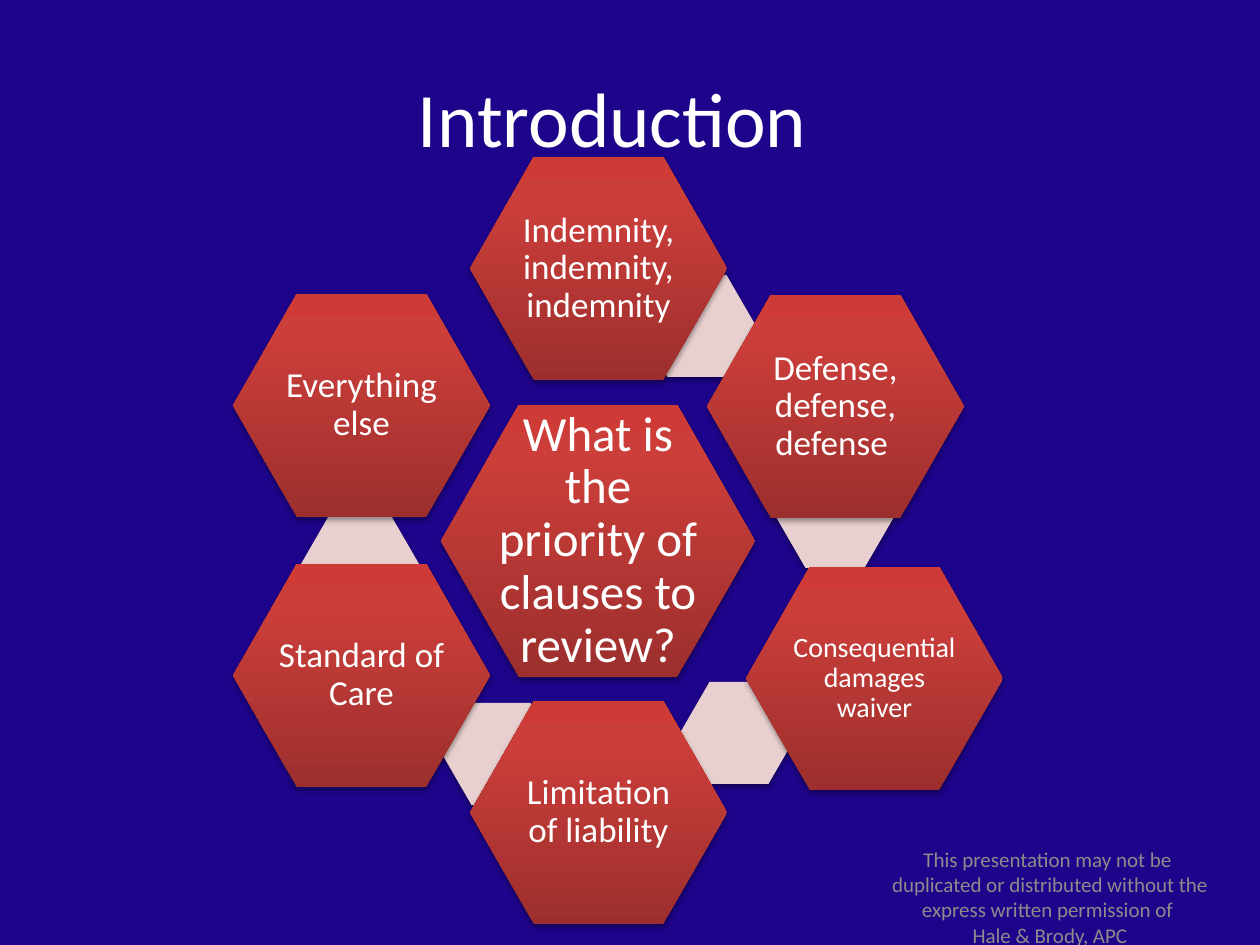
import copy

import lxml.etree
import pptx
import pptx.util
from pptx.dml.color import RGBColor
from pptx.enum.shapes import MSO_SHAPE
from pptx.enum.text import MSO_ANCHOR, PP_ALIGN
from pptx.oxml.ns import qn

# Content
TITLE = "Introduction"
NOTICE = [
    "This presentation may not be ",
    "duplicated or distributed without the express written permission of ",
    "Hale & Brody, APC",
]
CORE = ("What is the priority of clauses to review?", 441, 405)
# Clauses clockwise from the top: text, left, top, type size
RING = [
    ("Indemnity, indemnity, indemnity", 470, 157, "ring"),
    ("Defense, defense, defense ", 707, 295, "ring"),
    ("Consequential damages waiver", 746, 567, "small"),
    ("Limitation of liability", 470, 701, "ring"),
    ("Standard of Care", 233, 564, "ring"),
    ("Everything else", 233, 294, "ring"),
]
# Pale links, each drawn just behind the clause of the same index
LINKS = [(638, 275), (776, 466), (680, 682), (442, 703), (301, 513)]

# Theme
THEME = {
    "font": "Calibri",
    "back": "1E048A",
    "text": "FFFFFF",
    "mute": "8C8C8C",
    "link": "E8D0D0",
    "grad": [(0, "9C2F2D"), (0.8, "CB3E3A"), (1, "CE3B37")],
    "size": {"title": 44, "core": 28, "ring": 20, "small": 16, "note": 12},
}
CORE_SIZE, RING_SIZE, LINK_SIZE = (314, 272), (257, 223), (118, 102)
SCALE = 914400 / 126


def px(num):
    return pptx.util.Emu(round(num * SCALE))


def add_text(shapes, lines, box, size, color="text", pad=(13, 6, 13, 6), space=None):
    shape = shapes.add_textbox(*map(px, box))
    frame = shape.text_frame
    frame.word_wrap = True
    frame.vertical_anchor = MSO_ANCHOR.MIDDLE
    (frame.margin_left, frame.margin_top,
     frame.margin_right, frame.margin_bottom) = map(px, pad)
    for idx, line in enumerate(lines):
        para = frame.add_paragraph() if idx else frame.paragraphs[0]
        para.alignment = PP_ALIGN.CENTER
        if space:
            para.line_spacing = space
        run = para.add_run()
        run.text = line
        run.font.name = THEME["font"]
        run.font.size = pptx.util.Pt(THEME["size"][size])
        run.font.color.rgb = RGBColor.from_string(THEME[color])


def add_shade(shape):
    shape.shadow.inherit = False
    effects = shape.element.spPr.find(qn("a:effectLst"))
    shade = lxml.etree.SubElement(
        effects, qn("a:outerShdw"), blurRad=str(pptx.util.Pt(3.1)),
        dist=str(pptx.util.Pt(1.8)), dir="5400000", rotWithShape="0")
    color = lxml.etree.SubElement(shade, qn("a:srgbClr"), val="000000")
    lxml.etree.SubElement(color, qn("a:alpha"), val="35000")


def fill_grad(shape):
    shape.fill.gradient()
    shape.fill.gradient_angle = 90
    stops = shape.element.spPr.find(qn("a:gradFill")).find(qn("a:gsLst"))
    stops.append(copy.deepcopy(stops[-1]))
    for stop, (pos, color) in zip(shape.fill.gradient_stops, THEME["grad"]):
        stop.position = pos
        stop.color.rgb = RGBColor.from_string(color)


def add_hex(shapes, left, top, size, adj):
    shape = shapes.add_shape(MSO_SHAPE.HEXAGON, *map(px, (left, top, *size)))
    shape.adjustments[0] = adj
    shape.line.fill.background()
    add_shade(shape)
    return shape


def add_link(shapes, left, top):
    shape = add_hex(shapes, left, top, LINK_SIZE, 0.289)
    shape.fill.solid()
    shape.fill.fore_color.rgb = RGBColor.from_string(THEME["link"])


def add_clause(shapes, text, left, top, size, type_size, pad):
    fill_grad(add_hex(shapes, left, top, size, 0.286))
    # The label covers the middle two thirds of its hexagon
    wide, high = (side * 0.67 for side in size)
    box = (left + (size[0] - wide) / 2, top + (size[1] - high) / 2, wide, high)
    add_text(shapes, [text], box, type_size, pad=(pad,) * 4, space=0.9)


def main():
    deck = pptx.Presentation()
    deck.slide_width, deck.slide_height = px(1260), px(945)
    slide = deck.slides.add_slide(deck.slide_layouts[6])
    slide.background.fill.solid()
    slide.background.fill.fore_color.rgb = RGBColor.from_string(THEME["back"])

    # Title, set a little left of centre by its right inset, and notice
    add_text(slide.shapes, [TITLE], (63, 38, 1134, 157), "title", pad=(13, 6, 48, 6))
    add_text(slide.shapes, NOTICE, (850, 872, 400, 50), "note", color="mute")

    # Hexagon ring around its core
    group = slide.shapes.add_group_shape().shapes
    add_clause(group, *CORE, CORE_SIZE, "core", 5)
    for idx, (text, left, top, size) in enumerate(RING):
        if idx < len(LINKS):
            # Each link sits behind the clause it leads to
            add_link(group, *LINKS[idx])
        add_clause(group, text, left, top, RING_SIZE, size, 3)

    deck.save("out.pptx")


if __name__ == "__main__":
    main()
